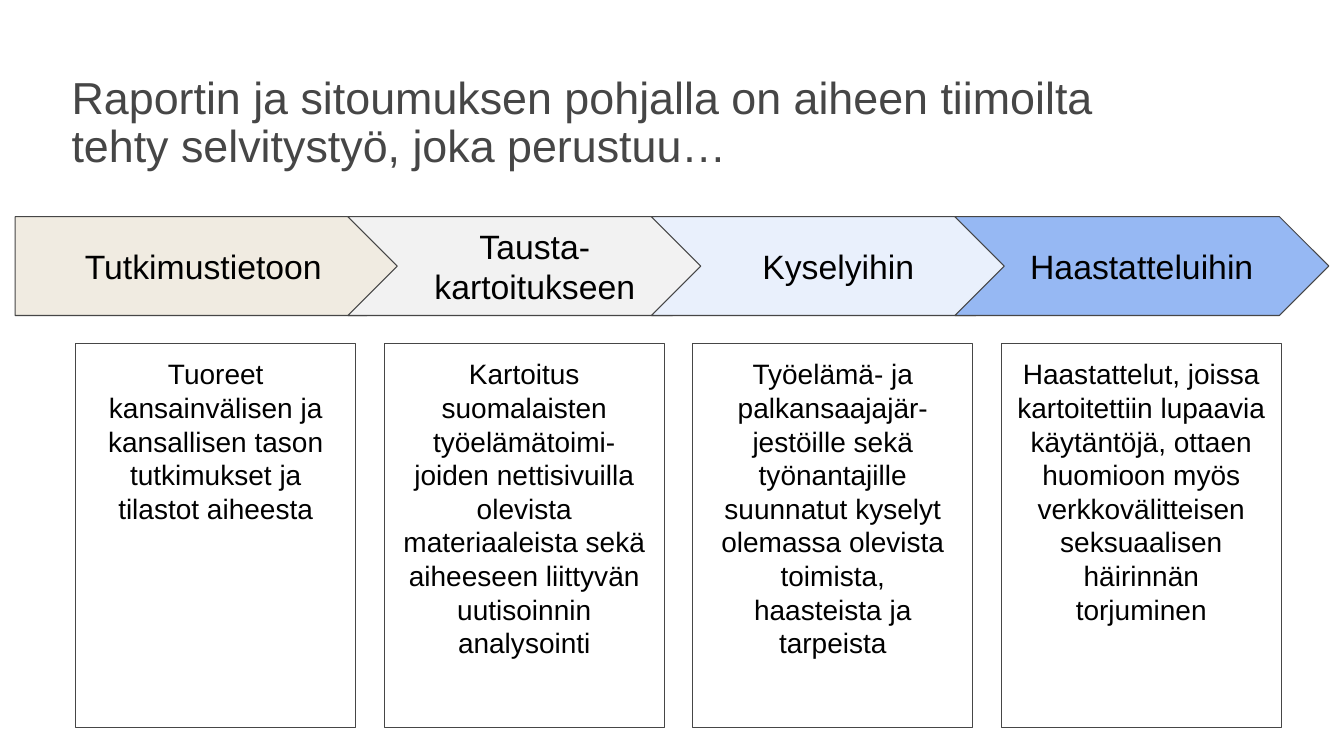
from pptx import Presentation
from pptx.dml.color import RGBColor
from pptx.enum import shapes, text
from pptx.util import Inches, Pt

GREY = RGBColor(0x46, 0x46, 0x46)
BLACK = RGBColor(0x00, 0x00, 0x00)
SAND = RGBColor(0xF0, 0xEB, 0xE1)
PALE_GREY = RGBColor(0xF2, 0xF2, 0xF2)
PALE_BLUE = RGBColor(0xE9, 0xF0, 0xFC)
BLUE = RGBColor(0x96, 0xB8, 0xF3)

# Heading, arrow colour and description of each source
SOURCES = [
    ("Tutkimustietoon", SAND,
     "Tuoreet kansainvälisen ja kansallisen tason tutkimukset ja tilastot aiheesta"),
    ("Tausta-\nkartoitukseen", PALE_GREY,
     "Kartoitus suomalaisten työelämätoimi-\n"
     "joiden nettisivuilla olevista materiaaleista sekä aiheeseen liittyvän "
     "uutisoinnin analysointi"),
    ("Kyselyihin", PALE_BLUE,
     "Työelämä- ja palkansaajajär-\n"
     "jestöille sekä työnantajille suunnatut kyselyt olemassa olevista toimista,\n"
     "haasteista ja tarpeista"),
    ("Haastatteluihin", BLUE,
     "Haastattelut, joissa kartoitettiin lupaavia käytäntöjä, ottaen huomioon myös "
     "verkkovälitteisen seksuaalisen häirinnän torjuminen"),
]


def write(frame, words, size, color, align, anchor, inset):
    frame.text = words
    frame.word_wrap = True
    frame.auto_size = text.MSO_AUTO_SIZE.NONE
    frame.vertical_anchor = anchor
    frame.margin_left = frame.margin_right = Inches(inset)
    frame.margin_top = frame.margin_bottom = Inches(inset)
    for para in frame.paragraphs:
        para.alignment = align
        for span in para.runs:
            span.font.name = "Arial"
            span.font.size = Pt(size)
            span.font.color.rgb = color


def add_outlined(kind, left, top, width, height):
    shape = page.shapes.add_shape(
        kind, Inches(left), Inches(top), Inches(width), Inches(height))
    shape.shadow.inherit = False
    shape.line.color.rgb = GREY
    shape.line.width = Pt(0.75)
    return shape


deck = Presentation()
deck.slide_width = Inches(13.33)
deck.slide_height = Inches(7.5)
page = deck.slides.add_slide(deck.slide_layouts[5])

# Title
title = page.shapes.title
title.left, title.top = Inches(0.71), Inches(0.53)
title.width, title.height = Inches(10.82), Inches(1.18)
write(title.text_frame,
      "Raportin ja sitoumuksen pohjalla on aiheen tiimoilta tehty selvitystyö, "
      "joka perustuu…",
      32, GREY, text.PP_ALIGN.LEFT, text.MSO_ANCHOR.BOTTOM, 0)
title.text_frame.paragraphs[0].line_spacing = 0.9

# One arrow and one description box per source
for index, (heading, color, description) in enumerate(SOURCES):
    if index == 0:
        arrow = add_outlined(shapes.MSO_SHAPE.PENTAGON, 0.15, 2.15, 3.98, 0.98)
    else:
        arrow = add_outlined(
            shapes.MSO_SHAPE.CHEVRON, 3.45 + 3.01 * (index - 1), 2.15, 3.71, 0.98)
    arrow.adjustments[0] = 0.5
    arrow.fill.solid()
    arrow.fill.fore_color.rgb = color
    write(arrow.text_frame, heading, 24.1, BLACK,
          text.PP_ALIGN.CENTER, text.MSO_ANCHOR.MIDDLE, 0.13)

    box = add_outlined(shapes.MSO_SHAPE.RECTANGLE, 0.75 + 3.06 * index, 3.41, 2.78, 3.81)
    box.fill.background()
    write(box.text_frame, description, 20, BLACK,
          text.PP_ALIGN.CENTER, text.MSO_ANCHOR.TOP, 0.13)

deck.save("out.pptx")
